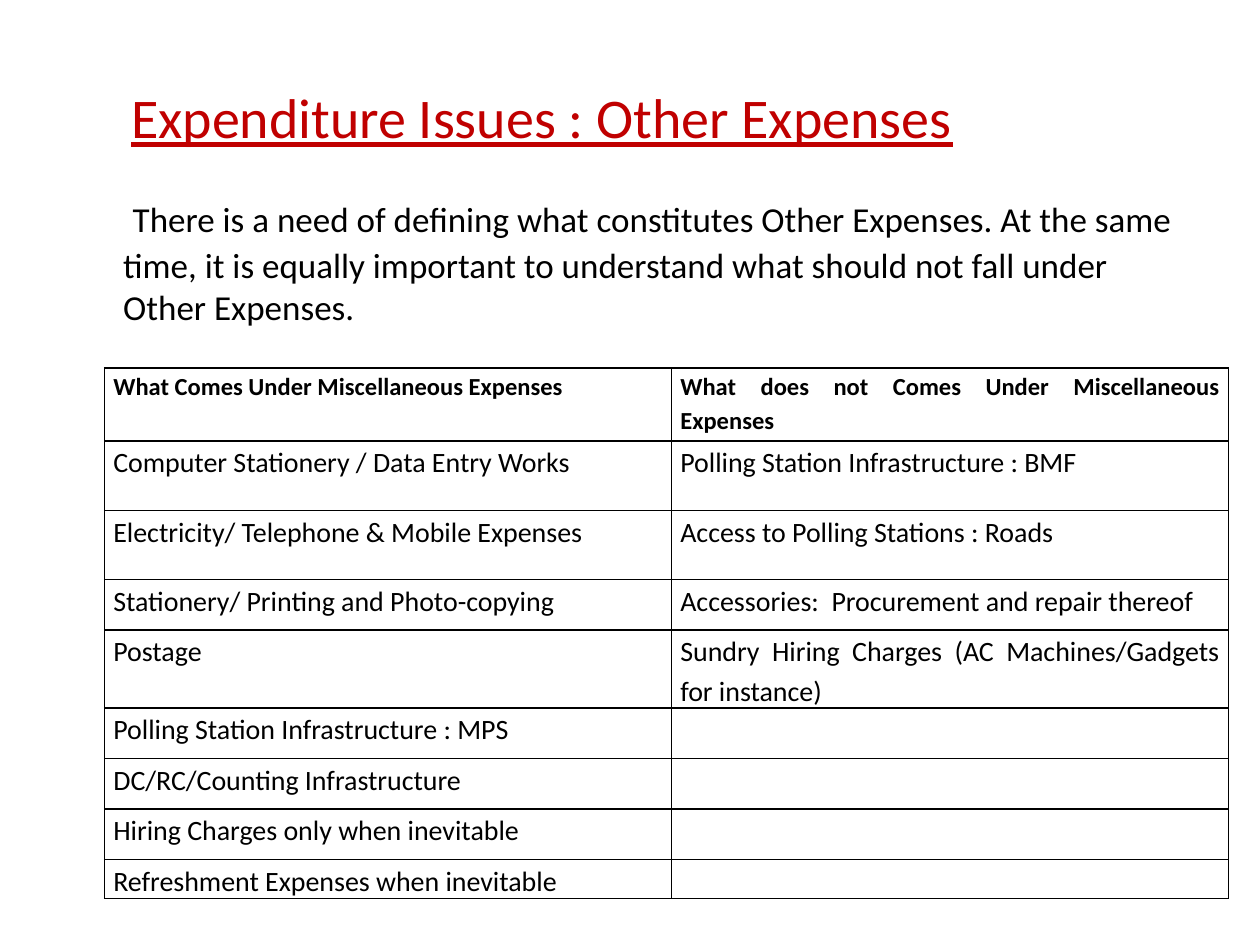
from itertools import zip_longest

from pptx import Presentation
from pptx.dml.color import RGBColor
from pptx.enum.text import MSO_ANCHOR, PP_ALIGN
from pptx.oxml import parse_xml
from pptx.oxml.ns import nsdecls
from pptx.util import Inches, Pt

LEFT, JUSTIFY = PP_ALIGN.LEFT, PP_ALIGN.JUSTIFY
MIDDLE, TOP = MSO_ANCHOR.MIDDLE, MSO_ANCHOR.TOP
FONT, RED, BLACK = "Calibri", "C00000", "000000"

# Content
TITLE = "Expenditure Issues : Other Expenses"
INTRO = ("There is a need of defining what constitutes Other Expenses. At the same time, "
         "it is equally important to understand what should not fall under Other Expenses.")
HEADERS = ("What Comes Under Miscellaneous Expenses",
           "What does not Comes Under Miscellaneous Expenses")
INCLUDED = [
    "Computer Stationery / Data Entry Works",
    "Electricity/ Telephone & Mobile Expenses",
    "Stationery/ Printing and Photo-copying",
    "Postage",
    "Polling Station Infrastructure : MPS",
    "DC/RC/Counting Infrastructure",
    "Hiring Charges only when inevitable",
    "Refreshment Expenses when inevitable",
]
EXCLUDED = [
    "Polling Station Infrastructure : BMF",
    "Access to Polling Stations : Roads",
    "Accessories:  Procurement and repair thereof",
    "Sundry Hiring Charges (AC Machines/Gadgets for instance)",
]
COLUMN_WIDTHS = (4.5, 4.42)
ROW_HEIGHTS = (0.58, 0.55, 0.55, 0.4, 0.62, 0.4, 0.4, 0.4, 0.31)


def add_text(paragraph, text, size=16, color=BLACK, bold=False, underline=False):
    run = paragraph.add_run()
    run.text = text
    font = run.font
    font.name, font.size, font.bold, font.underline = FONT, Pt(size), bold, underline
    font.color.rgb = RGBColor.from_string(color)


def place(shape, left, top, width, height):
    shape.left, shape.top = Inches(left), Inches(top)
    shape.width, shape.height = Inches(width), Inches(height)


def add_borders(cell, color=BLACK, width=1):
    properties = cell._tc.get_or_add_tcPr()
    for position, side in enumerate(("lnL", "lnR", "lnT", "lnB")):
        properties.insert(position, parse_xml(
            f'<a:{side} {nsdecls("a")} w="{Pt(width)}"><a:solidFill>'
            f'<a:srgbClr val="{color}"/></a:solidFill></a:{side}>'))


def fill_cell(cell, text, size, bold, alignment):
    cell.fill.background()
    cell.vertical_anchor = TOP
    cell.margin_left = cell.margin_right = Inches(0.07)
    cell.margin_top = cell.margin_bottom = 0
    paragraph = cell.text_frame.paragraphs[0]
    paragraph.alignment = alignment
    paragraph.line_spacing = 1.15
    paragraph.font.size = Pt(size)
    if text:
        add_text(paragraph, text, size=size, bold=bold)
    add_borders(cell)


presentation = Presentation()
presentation.slide_width, presentation.slide_height = Inches(10), Inches(7.5)
slide = presentation.slides.add_slide(presentation.slide_layouts[5])

# Title
title = slide.shapes.title
place(title, 0.5, 0.3, 9, 1.25)
title.text_frame.vertical_anchor = MIDDLE
title.text_frame.margin_left = Inches(0.54)
title_paragraph = title.text_frame.paragraphs[0]
title_paragraph.alignment = LEFT
add_text(title_paragraph, TITLE, size=32, color=RED, underline=True)

# Introduction, with a hanging indent reached by a tab
intro = slide.shapes.add_textbox(0, 0, 0, 0)
place(intro, 0.5, 1.35, 9, 1.4)
intro.text_frame.word_wrap = True
intro_paragraph = intro.text_frame.paragraphs[0]
indent = Inches(0.38)
paragraph_properties = intro_paragraph._p.get_or_add_pPr()
paragraph_properties.set("marL", str(indent))
paragraph_properties.set("indent", str(-indent))
for text, size in (("\t", 32), (" ", 24), (INTRO, 20)):
    add_text(intro_paragraph, text, size=size)

# Table of expenses
rows = [HEADERS, *zip_longest(INCLUDED, EXCLUDED, fillvalue="")]
table = slide.shapes.add_table(
    len(rows), len(COLUMN_WIDTHS), Inches(0.83), Inches(2.92),
    Inches(sum(COLUMN_WIDTHS)), Inches(sum(ROW_HEIGHTS))).table
table.first_row = table.horz_banding = False
for column, width in zip(table.columns, COLUMN_WIDTHS):
    column.width = Inches(width)
for row_index, (row, height) in enumerate(zip(rows, ROW_HEIGHTS)):
    table.rows[row_index].height = Inches(height)
    is_header = row_index == 0
    for column_index, text in enumerate(row):
        fill_cell(table.cell(row_index, column_index), text,
                  size=14 if is_header else 16, bold=is_header, alignment=JUSTIFY)

presentation.save("out.pptx")
